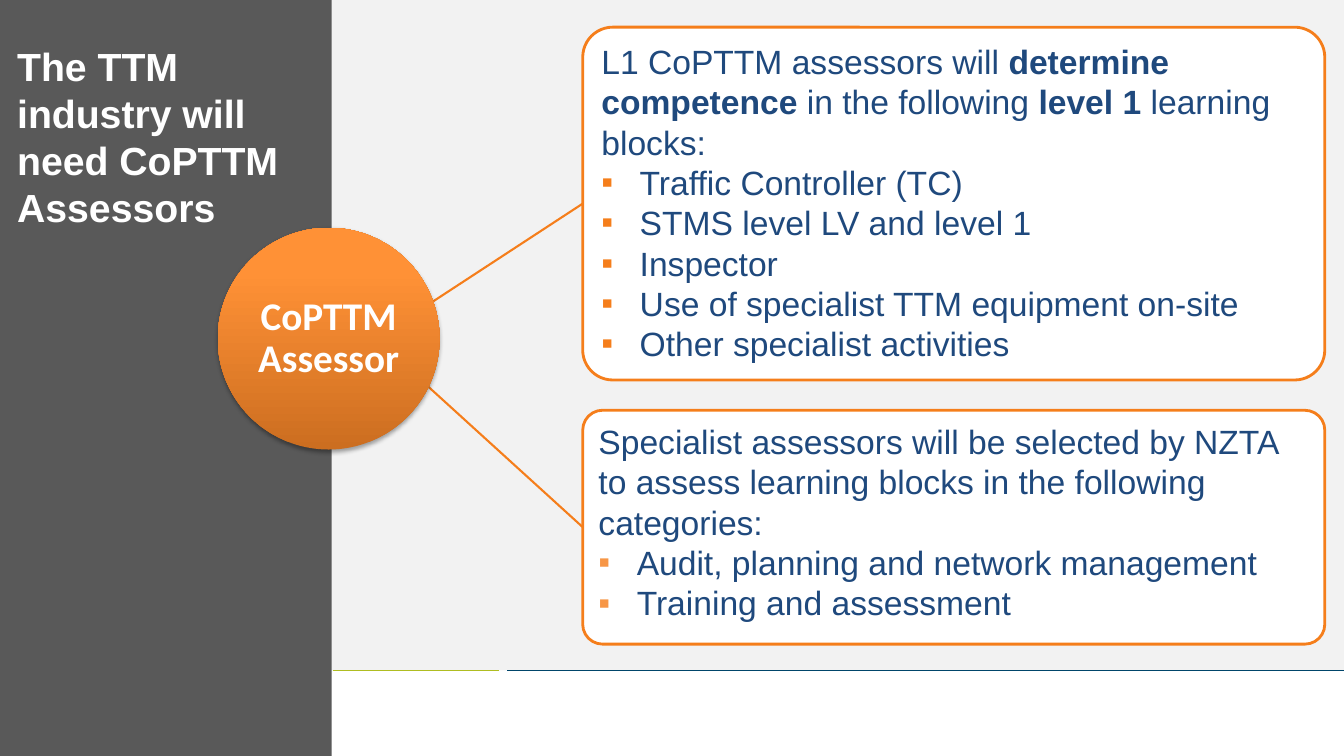
from lxml import etree
from pptx import Presentation
from pptx.dml.color import RGBColor
from pptx.enum import shapes as kinds, text as txt
from pptx.oxml import ns
from pptx.util import Inches, Pt

WHITE = RGBColor(0xFF, 0xFF, 0xFF)
PALE = RGBColor(0xF2, 0xF2, 0xF2)
DARK = RGBColor(0x59, 0x59, 0x59)
LIME = RGBColor(0xAF, 0xBD, 0x21)
TEAL = RGBColor(0x00, 0x45, 0x6A)
ORANGE = RGBColor(0xF5, 0x7E, 0x1B)
LIGHT_ORANGE = RGBColor(0xF7, 0x96, 0x46)
NAVY = RGBColor(0x1F, 0x49, 0x7D)
BALL_DARK = RGBColor(0xCC, 0x6E, 0x20)
BALL_LIGHT = RGBColor(0xFF, 0x91, 0x36)

# Content
TITLE = "The TTM industry will need CoPTTM Assessors"
ROLE = "CoPTTM Assessor"
CARDS = [  # top, height, spoke start, bullet colour, intro as (text, bold), bullets
    (0.27, 3.5, (4.22, 3.04), ORANGE,
     [("L1 CoPTTM assessors will ", False), ("determine competence ", True),
      ("in the following ", False), ("level 1 ", True), ("learning blocks:", False)],
     ["Traffic Controller (TC)", "STMS level LV and level 1", "Inspector",
      "Use of specialist TTM equipment on-site", "Other specialist activities"]),
    (4.07, 2.32, (4.23, 3.82), LIGHT_ORANGE,
     [("Specialist assessors will be selected by NZTA to assess learning blocks "
       "in the following categories:", False)],
     ["Audit, planning and network management", "Training and assessment"]),
]
PANELS = [((3, 0, 10.33, 6.65), PALE), ((0, 0, 3.29, 7.5), DARK)]
RULES = [(3.3, 4.95, LIME), (5.03, 13.33, TEAL)]
RULE_Y = 6.65
CARD_LEFT, CARD_WIDTH = 5.78, 7.36
INDENT = 0.38
BALL = (2.16, 2.26, 2.2, 2.2)
BALL_INSET = 0.32

TITLE_FONT = dict(name="Arial", size=Pt(28), bold=True)
ROLE_FONT = dict(name="Calibri", size=Pt(28), bold=True)
CARD_FONT = dict(name="Arial", size=Pt(24))

prs = Presentation()
prs.slide_width, prs.slide_height = Inches(13.33), Inches(7.5)
slide = prs.slides.add_slide(prs.slide_layouts[5])


def set_font(font, style, color):
    for key, value in style.items():
        setattr(font, key, value)
    font.color.rgb = color


def add_shape(kind, box, fill=None):
    shape = slide.shapes.add_shape(kind, *map(Inches, box))
    shape.shadow.inherit = False
    shape.line.fill.background()
    if fill is not None:
        shape.fill.solid()
        shape.fill.fore_color.rgb = fill
    return shape


def add_line(start, end, color, width):
    line = slide.shapes.add_connector(
        kinds.MSO_CONNECTOR.STRAIGHT, *map(Inches, (*start, *end)))
    line.line.color.rgb = color
    line.line.width = Pt(width)
    etree.SubElement(line.element.spPr, ns.qn("a:effectLst"))
    return line


def add_bullet(paragraph, color):
    props = paragraph._p.get_or_add_pPr()
    props.set("marL", str(Inches(INDENT)))
    props.set("indent", str(-Inches(INDENT)))
    bullet_color = etree.SubElement(props, ns.qn("a:buClr"))
    etree.SubElement(bullet_color, ns.qn("a:srgbClr"), val=str(color))
    etree.SubElement(props, ns.qn("a:buFont"), typeface="Arial")
    etree.SubElement(props, ns.qn("a:buChar"), char="▪")


# Background panels and footer rules
for box, color in PANELS:
    add_shape(kinds.MSO_SHAPE.RECTANGLE, box, color)
for left, right, color in RULES:
    rule = add_line((left, RULE_Y), (right, RULE_Y), color, 0.75)

# Title, in front of the dark panel
title = slide.shapes.title
rule.element.addnext(title.element)
title.left, title.top, title.width, title.height = map(Inches, (0.07, 0.37, 3.16, 6.31))
title.text_frame.text = TITLE
title.text_frame.word_wrap = True
title.text_frame.vertical_anchor = txt.MSO_ANCHOR.TOP
heading = title.text_frame.paragraphs[0]
heading.alignment = txt.PP_ALIGN.LEFT
set_font(heading.font, TITLE_FONT, WHITE)

# Spokes from the ball to the middle of each card
for top, height, start, *_ in CARDS:
    add_line(start, (CARD_LEFT, top + height / 2), ORANGE, 1.5)

# Ball with gradient and soft shadow
ball = add_shape(kinds.MSO_SHAPE.OVAL, BALL)
ball.fill.gradient()
ball.fill.gradient_angle = 90
for stop, position, color in zip(ball.fill.gradient_stops, (0, 0.8), (BALL_DARK, BALL_LIGHT)):
    stop.position = position
    stop.color.rgb = color
effects = ball.element.spPr.find(ns.qn("a:effectLst"))
shadow = etree.SubElement(effects, ns.qn("a:outerShdw"), blurRad=str(Pt(3.1)),
                          dist=str(Pt(1.8)), dir="5400000", rotWithShape="0")
shade = etree.SubElement(shadow, ns.qn("a:srgbClr"), val="000000")
etree.SubElement(shade, ns.qn("a:alpha"), val="35000")

# Role name inside the ball
left, top, width, height = BALL
label = slide.shapes.add_textbox(*map(Inches, (
    left + BALL_INSET, top + BALL_INSET, width - 2 * BALL_INSET, height - 2 * BALL_INSET)))
frame = label.text_frame
frame.text = ROLE
frame.word_wrap = True
frame.vertical_anchor = txt.MSO_ANCHOR.MIDDLE
for side in ("left", "top", "right", "bottom"):
    setattr(frame, f"margin_{side}", Inches(0.01))
role = frame.paragraphs[0]
role.alignment = txt.PP_ALIGN.CENTER
role.line_spacing = 0.9
set_font(role.font, ROLE_FONT, WHITE)

# Cards
for top, height, _, bullet_color, intro, bullets in CARDS:
    card = add_shape(kinds.MSO_SHAPE.ROUNDED_RECTANGLE,
                     (CARD_LEFT, top, CARD_WIDTH, height), WHITE)
    card.adjustments[0] = 0.085
    card.line.color.rgb = ORANGE
    card.line.width = Pt(2)
    frame = card.text_frame
    frame.word_wrap = True
    frame.vertical_anchor = txt.MSO_ANCHOR.TOP
    lead = frame.paragraphs[0]
    for words, bold in intro:
        run = lead.add_run()
        run.text = words
        run.font.bold = bold
    for item in bullets:
        point = frame.add_paragraph()
        add_bullet(point, bullet_color)
        point.text = item
    for paragraph in frame.paragraphs:
        paragraph.alignment = txt.PP_ALIGN.LEFT
        set_font(paragraph.font, CARD_FONT, NAVY)

prs.save("out.pptx")
